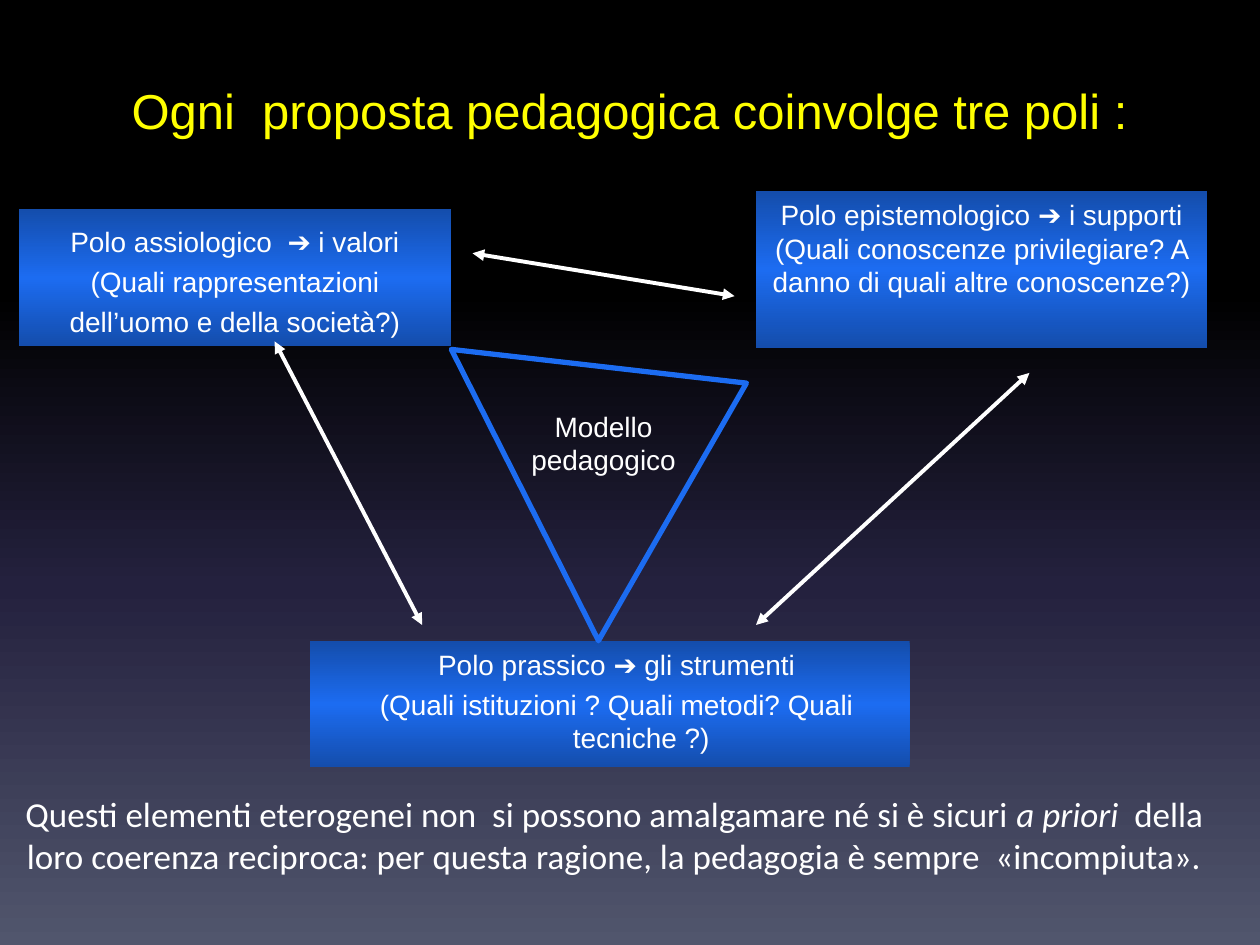
from lxml import etree
from pptx import Presentation
from pptx.dml.color import RGBColor
from pptx.enum import shapes, text
from pptx.oxml.ns import qn
from pptx.util import Inches, Pt

WHITE = RGBColor(0xFF, 0xFF, 0xFF)
YELLOW = RGBColor(0xFF, 0xFF, 0x00)
BLACK = RGBColor(0x00, 0x00, 0x00)
NIGHT = RGBColor(0x24, 0x21, 0x3E)
SLATE = RGBColor(0x51, 0x56, 0x6D)
BLUE = RGBColor(0x1C, 0x6C, 0xF1)
DEEP_BLUE = RGBColor(0x14, 0x4D, 0xAC)

BACKGROUND_STOPS = [(0, BLACK), (31, BLACK), (62, NIGHT), (100, SLATE)]
POLE_STOPS = [(0, DEEP_BLUE), (50, BLUE), (100, DEEP_BLUE)]

# Each pole: box, anchor, paragraph format, indents, paragraphs
POLES = [
    ((0.15, 1.66, 3.43, 1.09), text.MSO_ANCHOR.MIDDLE, {"line_spacing": 1.2}, None,
     ["Polo assiologico  ➔ i valori",
      "(Quali rappresentazioni dell’uomo e della società?)"]),
    ((2.46, 5.09, 4.76, 1), text.MSO_ANCHOR.TOP, {"space_before": Pt(3.5)}, (0.5, -0.39),
     ["Polo prassico ➔ gli strumenti",
      "(Quali istituzioni ? Quali metodi? Quali tecniche ?)"]),
    ((6, 1.52, 3.58, 1.24), text.MSO_ANCHOR.TOP, {}, None,
     ["Polo epistemologico\u00a0➔ i supporti",
      "(Quali conoscenze privilegiare? A danno di quali altre conoscenze?)"]),
]
ARROWS = [
    ((2.18, 2.71), (3.35, 4.96)),
    ((3.75, 2.01), (5.83, 2.35)),
    ((8.17, 2.96), (6, 4.96)),
]


def inches(values):
    return [Inches(value) for value in values]


def set_format(target, values):
    for name, value in values.items():
        setattr(target, name, value)


def fill_gradient(fill, owner, stops):
    """Fill from top to bottom; owner is the element that holds the fill."""
    fill.gradient()
    fill.gradient_angle = 270
    stop_list = owner.find(".//" + qn("a:gsLst"))
    for old_stop in list(stop_list):
        stop_list.remove(old_stop)
    for percent, color in stops:
        stop = etree.SubElement(stop_list, qn("a:gs"), pos=str(percent * 1000))
        etree.SubElement(stop, qn("a:srgbClr"), val=str(color))


def write(frame, paragraphs, size, font="Arial", color=WHITE, layout=None):
    """Write centred paragraphs, each a list of (words, italic) spans."""
    frame.word_wrap = True
    for index, spans in enumerate(paragraphs):
        para = frame.paragraphs[0] if index == 0 else frame.add_paragraph()
        set_format(para, {"alignment": text.PP_ALIGN.CENTER, **(layout or {})})
        for words, italic in spans:
            span = para.add_run()
            span.text = words
            set_format(span.font, {"name": font, "size": Pt(size), "italic": italic})
            span.font.color.rgb = color


def add_title(page, box):
    title = page.shapes.title
    set_format(title, dict(zip(("left", "top", "width", "height"), inches(box))))
    title.text_frame.vertical_anchor = text.MSO_ANCHOR.MIDDLE
    write(title.text_frame, [[("Ogni  proposta pedagogica coinvolge tre poli :", None)]],
          28, color=YELLOW)


def add_pole(page, box, anchor, layout, indents, lines):
    pole = page.shapes.add_shape(shapes.MSO_SHAPE.RECTANGLE, *inches(box))
    pole.shadow.inherit = False
    pole.line.fill.background()
    fill_gradient(pole.fill, pole.element, POLE_STOPS)
    frame = pole.text_frame
    frame.vertical_anchor = anchor
    write(frame, [[(line, None)] for line in lines], 16, layout=layout)
    if indents:
        for para in frame.paragraphs:
            properties = para._p.get_or_add_pPr()
            for name, value in zip(("marL", "indent"), indents):
                properties.set(name, str(Inches(value)))


def add_double_arrow(page, start, end):
    arrow = page.shapes.add_connector(shapes.MSO_CONNECTOR.STRAIGHT, *inches(start + end))
    arrow.line.color.rgb = WHITE
    arrow.line.width = Pt(2.25)
    line = arrow.line._get_or_add_ln()
    for tip in ("a:headEnd", "a:tailEnd"):
        etree.SubElement(line, qn(tip), type="triangle")
    etree.SubElement(arrow.element.spPr, qn("a:effectLst"))


def add_triangle(page, box, rotation):
    triangle = page.shapes.add_shape(shapes.MSO_SHAPE.ISOSCELES_TRIANGLE, *inches(box))
    triangle.rotation = rotation
    triangle.shadow.inherit = False
    triangle.fill.background()
    triangle.line.color.rgb = BLUE
    triangle.line.width = Pt(3)


def add_caption(page, box, spans, size, font="Arial", layout=None):
    frame = page.shapes.add_textbox(*inches(box)).text_frame
    frame.auto_size = text.MSO_AUTO_SIZE.SHAPE_TO_FIT_TEXT
    write(frame, [spans], size, font, layout=layout)


def main():
    deck = Presentation()
    deck.slide_width, deck.slide_height = Inches(10), Inches(7.5)
    page = deck.slides.add_slide(deck.slide_layouts.get_by_name("Title Only"))
    fill_gradient(page.background.fill, page.element, BACKGROUND_STOPS)
    add_title(page, (0.62, 0.37, 8.75, 1))
    for pole in POLES:
        add_pole(page, *pole)
    for start, end in ARROWS:
        add_double_arrow(page, start, end)
    add_triangle(page, (3.75, 2.5, 2.59, 1.97), 63.2)
    add_caption(page, (4, 3.2, 1.58, 0.64), [("Modello pedagogico", None)], 16,
                layout={"space_before": Pt(8)})
    add_caption(page, (0, 6.24, 9.75, 0.77), [
        ("Questi elementi eterogenei non  si possono amalgamare né si è sicuri ", None),
        ("a priori  ", True),
        ("della loro coerenza reciproca: per questa ragione, la pedagogia è sempre"
         "  «incompiuta».", None),
    ], 20, "Calibri")
    deck.save("out.pptx")


if __name__ == "__main__":
    main()
